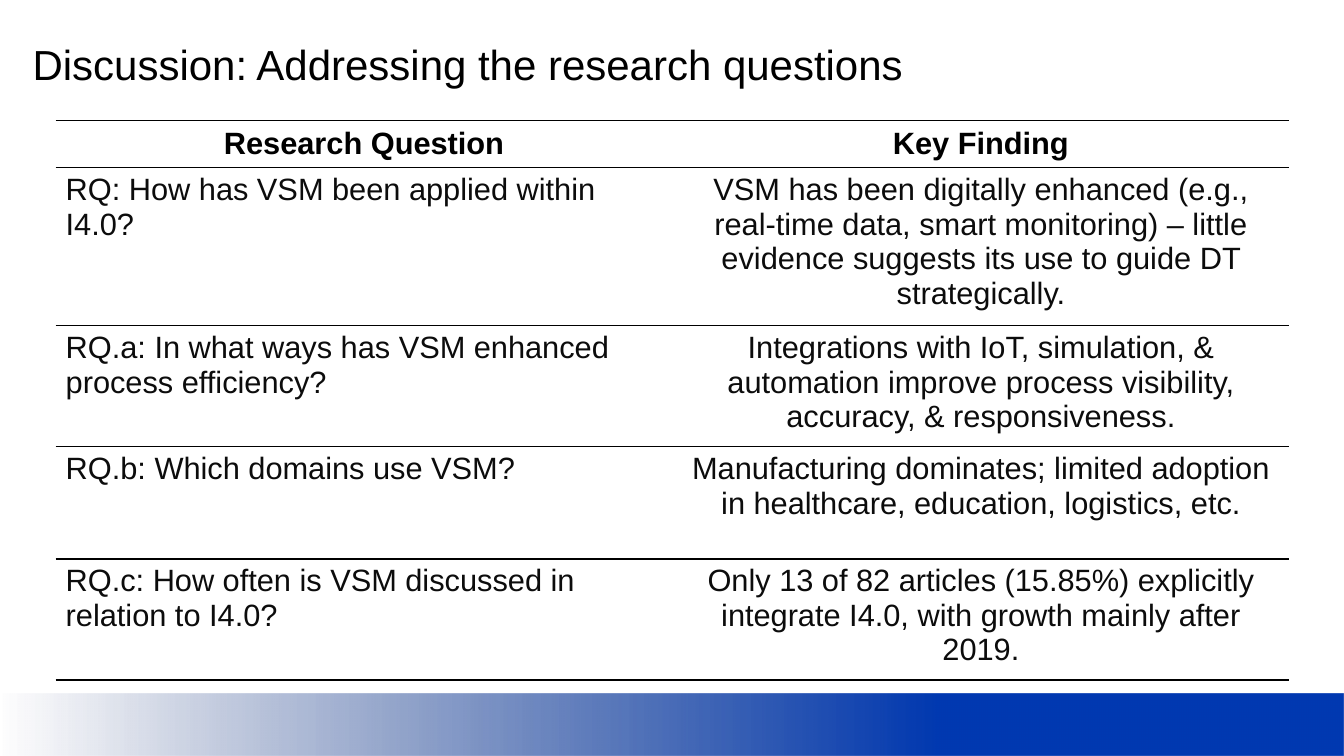
from lxml import etree
from pptx import Presentation
from pptx.dml.color import RGBColor
from pptx.enum.shapes import MSO_SHAPE
from pptx.enum.text import MSO_ANCHOR, PP_ALIGN
from pptx.oxml.ns import qn
from pptx.util import Pt

PX = 9525  # EMU per px, 96 px to the inch
RECT = MSO_SHAPE.RECTANGLE
TOP, MIDDLE = MSO_ANCHOR.TOP, MSO_ANCHOR.MIDDLE
LEFT, CENTER = PP_ALIGN.LEFT, PP_ALIGN.CENTER
FONT = "Arial"
BLACK, INK, WHITE = "000000", "0C0C0C", "FFFFFF"
NAVY, BLUE = "002166", "0039B1"

ROW_HEIGHTS = [41, 140, 107, 107, 107]
FINDINGS = [
    ("Research Question", "Key Finding"),
    ("RQ: How has VSM been applied within I4.0?",
     "VSM has been digitally enhanced (e.g., real-time data, smart monitoring) "
     "– little evidence suggests its use to guide DT strategically."),
    ("RQ.a: In what ways has VSM enhanced process efficiency?",
     "Integrations with IoT, simulation, & automation improve process "
     "visibility, accuracy, & responsiveness."),
    ("RQ.b: Which domains use VSM?",
     "Manufacturing dominates; limited adoption in healthcare, education, "
     "logistics, etc."),
    ("RQ.c: How often is VSM discussed in relation to I4.0?",
     "Only 13 of 82 articles (15.85%) explicitly integrate I4.0, with growth "
     "mainly after 2019."),
]


def rgb(color):
    return RGBColor.from_string(color)


def emu(*lengths):
    return [n * PX for n in lengths]


def set_text(tf, text, size, color, bold=False, align=LEFT):
    p = tf.paragraphs[0]
    p.text = text
    p.alignment = align
    font = p.runs[0].font
    font.name, font.size, font.bold = FONT, Pt(size), bold
    font.color.rgb = rgb(color)


def add_footer_band(s, x, y, w, h):
    sp = s.shapes.add_shape(RECT, *emu(x, y, w, h))
    sp.shadow.inherit = False
    sp.line.fill.background()
    sp.fill.gradient()
    sp.fill.gradient_angle = 0
    # Transparent navy fades into solid blue at 70 %
    stops = sp.fill.gradient_stops
    for stop, color, position in zip(stops, (NAVY, BLUE), (0, 0.7)):
        stop.color.rgb = rgb(color)
        stop.position = position
    clear = sp._element.spPr.find(".//" + qn("a:srgbClr"))
    etree.SubElement(clear, qn("a:alpha"), val="0")


def add_title(s, x, y, w, h):
    tf = s.shapes.add_textbox(*emu(x, y, w, h)).text_frame
    tf.word_wrap = True
    tf.margin_left = tf.margin_right = tf.margin_top = tf.margin_bottom = 10 * PX
    set_text(tf, "Discussion: Addressing the research questions", 30, BLACK)


def set_borders(cell):
    """Rule the top and bottom of a cell and leave its sides open."""
    tcPr = cell._tc.get_or_add_tcPr()
    for i, side in enumerate(("lnL", "lnR", "lnT", "lnB")):
        ln = etree.Element(qn("a:" + side), w=str(Pt(1)))
        tcPr.insert(i, ln)
        if side in ("lnL", "lnR"):
            etree.SubElement(ln, qn("a:noFill"))
        else:
            fill = etree.SubElement(ln, qn("a:solidFill"))
            etree.SubElement(fill, qn("a:srgbClr"), val=BLACK)


def add_findings_table(s, x, y, w, h):
    table = s.shapes.add_table(len(FINDINGS), 2, *emu(x, y, w, h)).table
    table.first_row = table.horz_banding = False
    for column in table.columns:
        column.width = w * PX // 2
    for r, (height, texts) in enumerate(zip(ROW_HEIGHTS, FINDINGS)):
        table.rows[r].height = height * PX
        header = r == 0
        for c, text in enumerate(texts):
            cell = table.cell(r, c)
            cell.fill.solid()
            cell.fill.fore_color.rgb = rgb(WHITE)
            cell.vertical_anchor = MIDDLE if header else TOP
            set_text(cell.text_frame, text, 22, BLACK if header else INK,
                     header, CENTER if header or c == 1 else LEFT)
            set_borders(cell)


def main():
    prs = Presentation()
    prs.slide_width, prs.slide_height = emu(1280, 720)
    s = prs.slides.add_slide(prs.slide_layouts[6])
    add_footer_band(s, 0, 661, 1280, 59)
    add_title(s, 21, 27, 1236, 611)
    add_findings_table(s, 53, 115, 1175, sum(ROW_HEIGHTS))
    prs.save("out.pptx")


if __name__ == "__main__":
    main()
